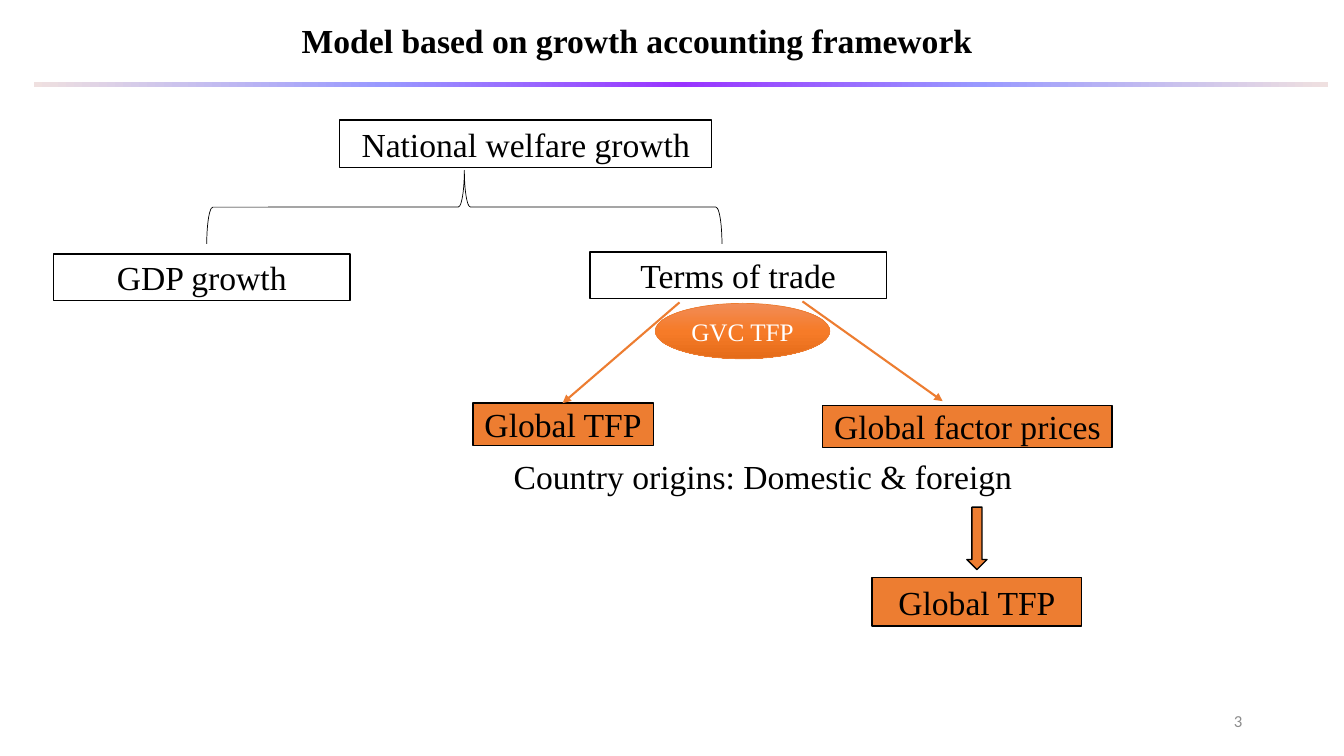
from lxml.etree import SubElement
from pptx import Presentation
from pptx.dml.color import RGBColor
from pptx.enum.shapes import MSO_CONNECTOR, MSO_SHAPE
from pptx.enum.text import MSO_ANCHOR, PP_ALIGN
from pptx.oxml.ns import qn
from pptx.util import Inches, Pt

WIDTH, HEIGHT = Inches(13.33), Inches(7.5)
COLORS = {
    "ink": "000000", "paper": "FFFFFF", "orange": "ED7D31", "number": "8C8C8C",
    "violet": "9933FF", "periwinkle": "9999FF", "blush": "EFE0E0",
    "oval top": "F18C57", "oval middle": "F67B28", "oval bottom": "E56C19",
}
BRANCH_SIZE = (22.06, 6.13)


def rgb(name):
    return RGBColor.from_string(COLORS[name])


def place(*shares):
    """Turn alternating x and y percentages of the slide into lengths."""
    return [round(share * (HEIGHT if i % 2 else WIDTH) / 100)
            for i, share in enumerate(shares)]


def write(holder, text, size=24, font="Times New Roman", color="ink", bold=False,
          align=PP_ALIGN.CENTER, anchor=MSO_ANCHOR.MIDDLE, wrap=True):
    frame = holder.text_frame
    frame.word_wrap = wrap
    frame.vertical_anchor = anchor
    paragraph = frame.paragraphs[0]
    paragraph.alignment = align
    run = paragraph.add_run()
    run.text = text
    run.font.size = Pt(size)
    run.font.name = font
    run.font.bold = bold
    run.font.color.rgb = rgb(color)


def fill_gradient(shape, stops, angle):
    """Fill with a linear gradient of (percent, colour name) stops."""
    shape.fill.gradient()
    shape.fill.gradient_angle = angle
    stop_list = shape.fill._fill._gradFill.find(qn("a:gsLst"))
    for stop in list(stop_list):
        stop_list.remove(stop)
    for percent, color in stops:
        stop = SubElement(stop_list, qn("a:gs"), pos=str(percent * 1000))
        SubElement(stop, qn("a:srgbClr"), val=COLORS[color])


def add_figure(slide, kind, shares, fill=None, line="ink", weight=1):
    figure = slide.shapes.add_shape(kind, *place(*shares))
    figure.shadow.inherit = False
    if fill:
        figure.fill.solid()
        figure.fill.fore_color.rgb = rgb(fill)
    else:
        figure.fill.background()
    if line:
        figure.line.color.rgb = rgb(line)
        figure.line.width = Pt(weight)
    else:
        figure.line.fill.background()
    return figure


def add_box(slide, text, shares, fill):
    box = add_figure(slide, MSO_SHAPE.RECTANGLE, shares, fill)
    write(box, text, wrap=False)


def add_label(slide, text, shares, **style):
    write(slide.shapes.add_textbox(*place(*shares)), text, **style)


def add_arrow(slide, shares):
    arrow = slide.shapes.add_connector(MSO_CONNECTOR.STRAIGHT, *place(*shares))
    arrow.line.color.rgb = rgb("orange")
    arrow.line.width = Pt(1.5)
    SubElement(arrow.line._get_or_add_ln(), qn("a:tailEnd"), type="triangle")
    SubElement(arrow._element.spPr, qn("a:effectLst"))


def add_heading(slide):
    title = slide.shapes.title
    title.left, title.top, title.width, title.height = place(19.5, 2, 55.8, 6.67)
    write(title, "Model based on growth accounting framework",
          bold=True, anchor=MSO_ANCHOR.TOP)
    rule = add_figure(slide, MSO_SHAPE.RECTANGLE, (2.5, 10.8, 96.3, 0.67), line=None)
    fill_gradient(rule, [(0, "blush"), (27, "periwinkle"), (50, "violet"),
                         (73, "periwinkle"), (100, "blush")], angle=0)


def add_welfare_tree(slide):
    add_box(slide, "National welfare growth", (25.28, 15.87, 27.68, 6.27), "paper")
    add_box(slide, "Terms of trade", (43.89, 33.33, *BRANCH_SIZE), "paper")
    add_box(slide, "GDP growth", (3.98, 33.6, *BRANCH_SIZE), "paper")
    brace = add_figure(slide, MSO_SHAPE.LEFT_BRACE, (31.81, -6.67, 5.48, 68.13),
                       weight=0.5)
    brace.rotation = 90


def add_trade_sources(slide):
    add_box(slide, "Global TFP", (35.18, 53.33, 13.43, 5.6), "orange")
    add_box(slide, "Global factor prices", (61.22, 53.6, 21.53, 5.6), "orange")
    add_arrow(slide, (50.56, 40, 41.86, 53.33))
    add_arrow(slide, (59.71, 39.87, 70.14, 53.07))
    oval = add_figure(slide, MSO_SHAPE.OVAL, (48.76, 40.13, 12.98, 7.33),
                      line="orange", weight=0.5)
    fill_gradient(oval, [(0, "oval top"), (50, "oval middle"), (100, "oval bottom")],
                  angle=270)
    write(oval, "GVC TFP", size=18, color="paper", wrap=False)


def add_country_origins(slide):
    add_box(slide, "Global TFP", (64.89, 76.4, 15.6, 6.4), "orange")
    add_figure(slide, MSO_SHAPE.DOWN_ARROW, (71.94, 67.07, 1.5, 8.27), "orange")
    add_label(slide, "Country origins: Domestic & foreign ",
              (29.18, 59.6, 55.8, 6.67), anchor=MSO_ANCHOR.TOP)


def main():
    deck = Presentation()
    deck.slide_width, deck.slide_height = WIDTH, HEIGHT
    slide = deck.slides.add_slide(deck.slide_layouts[5])
    add_heading(slide)
    add_welfare_tree(slide)
    add_trade_sources(slide)
    add_country_origins(slide)
    add_label(slide, "3", (70.67, 92.67, 22.5, 5.33), size=12, font="Calibri",
              color="number", align=PP_ALIGN.RIGHT)
    deck.save("out.pptx")


if __name__ == "__main__":
    main()
